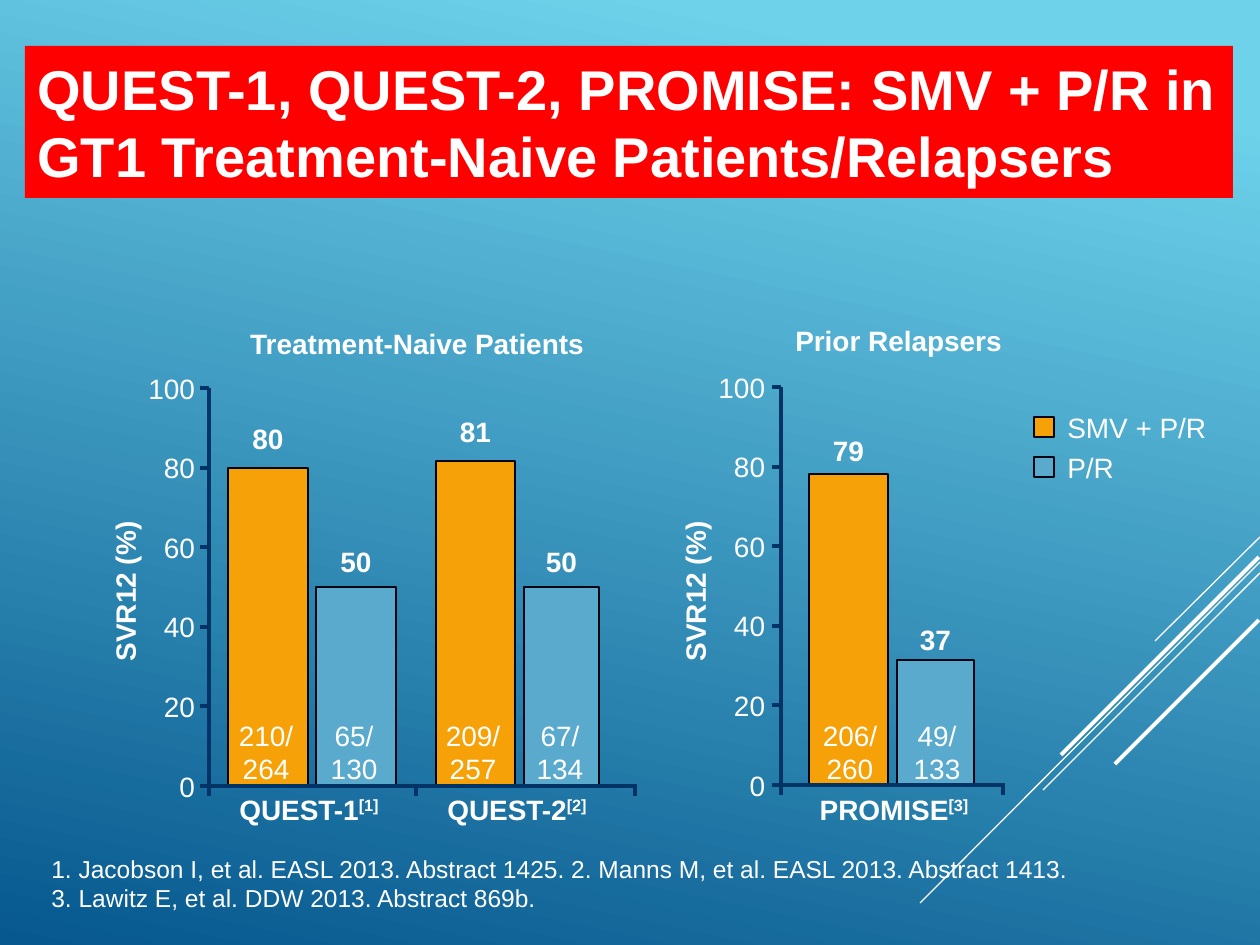
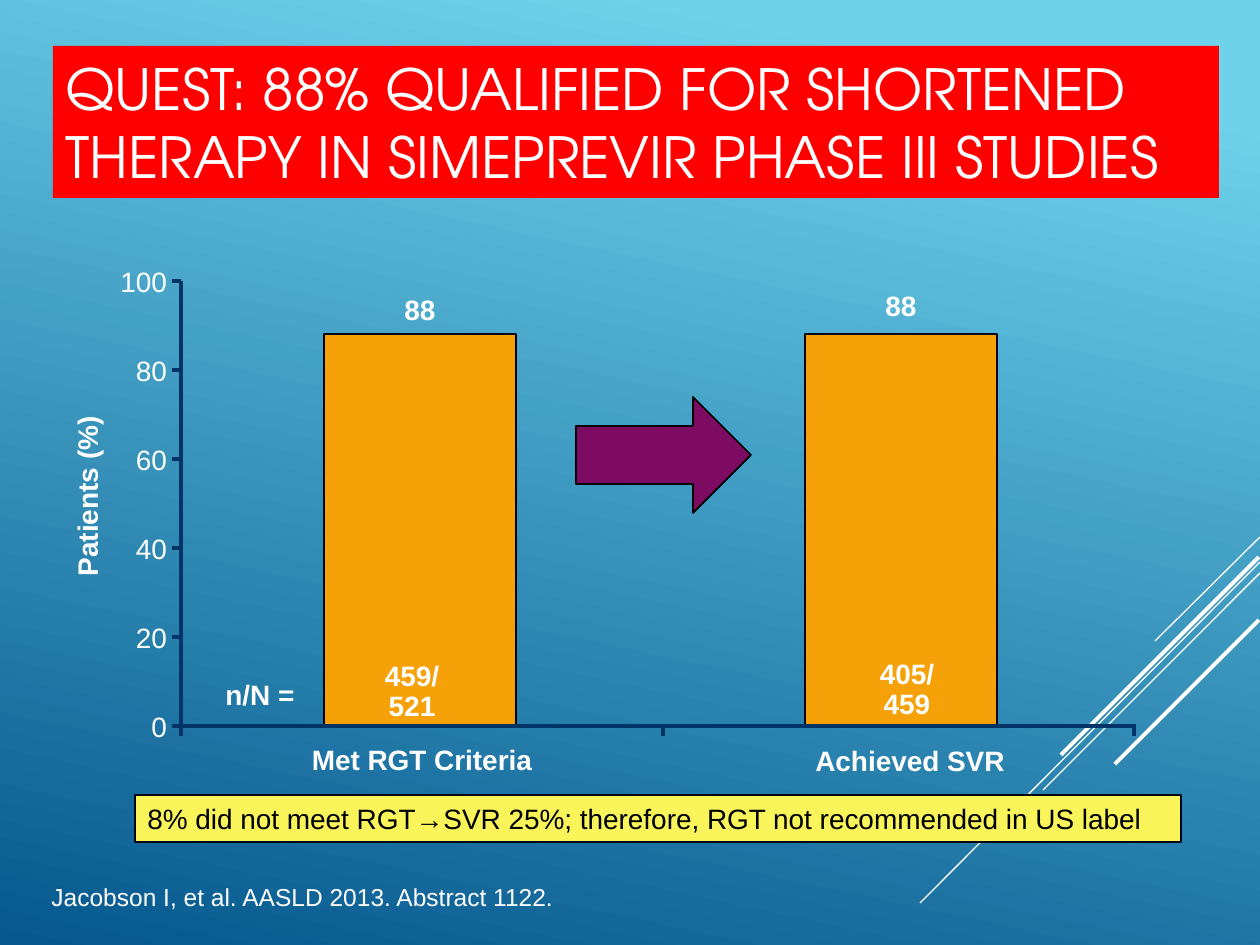
from lxml.etree import SubElement
from pptx import Presentation
from pptx.dml.color import RGBColor
from pptx.enum.shapes import MSO_CONNECTOR, MSO_SHAPE
from pptx.enum.text import MSO_ANCHOR as ANCHOR, PP_ALIGN as ALIGN
from pptx.oxml.ns import qn
from pptx.util import Pt

PX = 7257.14
WHITE = RGBColor(0xFF, 0xFF, 0xFF)
BLACK = RGBColor(0x00, 0x00, 0x00)
RED = RGBColor(0xFF, 0x00, 0x00)
ORANGE = RGBColor(0xF6, 0xA1, 0x08)
BLUE = RGBColor(0x5A, 0xAA, 0xCE)
NAVY = RGBColor(0x00, 0x33, 0x66)
PURPLE = RGBColor(0x7C, 0x0B, 0x61)
YELLOW = RGBColor(0xF8, 0xF4, 0x5A)
OUTLINE = RGBColor(0x00, 0x05, 0x14)
SKY = RGBColor(0x6E, 0xD2, 0xEB)
DEEP = RGBColor(0x06, 0x58, 0x8E)


def add_line(s, x1, y1, x2, y2, color=NAVY, width=2.25):
    c = s.shapes.add_connector(MSO_CONNECTOR.STRAIGHT, *[round(v * PX) for v in (x1, y1, x2, y2)])
    c.line.color.rgb = color
    c.line.width = Pt(width)
    SubElement(c._element.spPr, qn("a:effectLst"))


def add_box(s, x, y, w, h, text="", sup="", fill=None, line=None, line_width=0.75,
            shape=MSO_SHAPE.RECTANGLE, font="Arial", size=16, bold=False, color=WHITE,
            align=ALIGN.LEFT, anchor=ANCHOR.TOP, spacing=0.9, pad=True, rotation=0):
    frame = [round(v * PX) for v in (x, y, w, h)]
    if fill is None:
        sp = s.shapes.add_textbox(*frame)
    else:
        sp = s.shapes.add_shape(shape, *frame)
        sp.shadow.inherit = False
        sp.fill.solid()
        sp.fill.fore_color.rgb = fill
        if line is None:
            sp.line.fill.background()
        else:
            sp.line.color.rgb = line
            sp.line.width = Pt(line_width)
    sp.rotation = rotation
    if not text:
        return
    tf = sp.text_frame
    tf.word_wrap = True
    tf.vertical_anchor = anchor
    if not pad:
        tf.margin_left = tf.margin_right = tf.margin_top = tf.margin_bottom = 0
    p = tf.paragraphs[0]
    p.alignment = align
    p.line_spacing = spacing
    parts = text.split("\n")
    for i, part in enumerate(parts + [sup] if sup else parts):
        if 0 < i < len(parts):
            p.add_line_break()
        r = p.add_run()
        r.text = part
        r.font.name = font
        r.font.size = Pt(size)
        r.font.bold = bold
        r.font.color.rgb = color
        if i == len(parts):
            r._r.get_or_add_rPr().set("baseline", "30000")


prs = Presentation()
prs.slide_width = round(1260 * PX)
prs.slide_height = round(945 * PX)
s1, s2 = [prs.slides.add_slide(prs.slide_layouts[6]) for _ in range(2)]

for s in (s1, s2):
    bg = s.background.fill
    bg.gradient()
    bg.gradient_angle = 258
    for stop, color, position in zip(bg.gradient_stops, (SKY, DEEP), (0.1, 1)):
        stop.color.rgb = color
        stop.position = position
    for x1, y1, x2, y2, width in (
        (1260, 537, 1155, 641, 0.75),
        (1260, 562, 920, 903, 0.75),
        (1260, 573, 1043, 790, 0.75),
        (1259, 557, 1061, 755, 2.25),
        (1259, 620, 1115, 764, 2.25),
    ):
        add_line(s, x1, y1, x2, y2, WHITE, width)

titles = [
    (s1, 25, 1208, "QUEST-1, QUEST-2, PROMISE: SMV + P/R in GT1 Treatment-Naive Patients/Relapsers",
     "Arial", 32, True),
    (s2, 53, 1166, "QUEST: 88% QUALIFIED FOR SHORTENED THERAPY IN SIMEPREVIR PHASE III STUDIES",
     "TeX Gyre Adventor", 32.4, False),
]
for s, x, w, text, font, size, bold in titles:
    add_box(s, x, 46, w, 152, text, fill=RED, font=font, size=size, bold=bold,
            anchor=ANCHOR.MIDDLE, spacing=1)

# slide, axis x, top, base, category ticks, label right edge, axis title, its centre
panels = [
    (s1, 209, 388, 786, (209, 416, 635), 195, "SVR12 (%)", 127, 591),
    (s1, 781, 387, 785, (781, 1003), 765, "SVR12 (%)", 697, 591),
    (s2, 181, 281, 726, (181, 663, 1134), 167, "Patients (%)", 89, 496),
]
# x, top, width, colour, value, value y, counts, counts centre x, counts y
bars = [
    [(316, 587, 80, BLUE, "50", 548, "65/\n130", 354, 712),
     (228, 468, 80, ORANGE, "80", 425, "210/\n264", 266, 712),
     (436, 461, 79, ORANGE, "81", 418, "209/\n257", 473, 712),
     (524, 587, 75, BLUE, "50", 548, "67/\n134", 560, 712)],
    [(897, 660, 77, BLUE, "37", 626, "49/\n133", 937, 712),
     (809, 474, 79, ORANGE, "79", 437, "206/\n260", 850, 712)],
    [(324, 334, 192, ORANGE, "88", 296, "459/\n521", 412, 656),
     (805, 334, 192, ORANGE, "88", 292, "405/\n459", 907, 654)],
]
categories = [
    [("QUEST-1", "[1]", 309, 790), ("QUEST-2", "[2]", 517, 790)],
    [("PROMISE", "[3]", 894, 790)],
    [("Met RGT Criteria", "", 422, 740), ("Achieved SVR", "", 910, 741)],
]
for (s, x, top, base, ticks, right, name, cx, cy), panel_bars, labels in zip(panels, bars, categories):
    add_line(s, x, top, x, base)
    for i in range(6):
        y = top + (base - top) * i / 5
        add_line(s, x - 9, y, x, y)
        add_box(s, right - 60, y - 13, 60, 30, str(100 - 20 * i), align=ALIGN.RIGHT, pad=False)
    add_box(s, cx - 199, cy - 21, 398, 43, name, bold=True, align=ALIGN.CENTER, rotation=270)
    for bx, by, w, color, value, value_y, counts, counts_x, counts_y in panel_bars:
        add_box(s, bx, by, w, base - by, fill=color, line=OUTLINE)
        add_box(s, bx + w / 2 - 20, value_y, 40, 30, value, bold=True, align=ALIGN.CENTER, pad=False)
        add_box(s, counts_x - 41, counts_y, 82, 81, counts, bold=s is s2, align=ALIGN.CENTER,
                spacing=0.9 if s is s2 else 1)
    add_line(s, x - 3, base, ticks[-1] + 2, base)
    for tick in ticks:
        add_line(s, tick, base, tick, base + 10)
    for text, sup, label_x, label_y in labels:
        add_box(s, label_x - 130, label_y, 260, 43, text, sup, bold=True, align=ALIGN.CENTER)

for x, y, w, text in ((212, 324, 418, "Treatment-Naive Patients "), (782, 321, 233, "Prior Relapsers")):
    add_box(s1, x, y, w, 43, text, bold=True, align=ALIGN.CENTER)
for y, color, text in ((417, ORANGE, "SMV + P/R"), (457, BLUE, "P/R")):
    add_box(s1, 1034, y, 20, 20, fill=color, line=OUTLINE)
    add_box(s1, 1055, y - 9, 175, 43, text)
add_box(s1, 39, 856, 1174, 54,
        "1. Jacobson I, et al. EASL 2013. Abstract 1425. 2. Manns M, et al. EASL 2013. Abstract 1413.\n"
        "3. Lawitz E, et al. DDW 2013. Abstract 869b.",
        size=14, anchor=ANCHOR.MIDDLE, spacing=1)

add_box(s2, 576, 397, 175, 116, fill=PURPLE, line=BLACK, line_width=1, shape=MSO_SHAPE.RIGHT_ARROW)
add_box(s2, 213, 675, 105, 43, "n/N =", bold=True)
add_box(s2, 135, 795, 1046, 47,
        "8% did not meet RGT→SVR 25%; therefore, RGT not recommended in US label",
        fill=YELLOW, line=OUTLINE, color=BLACK, spacing=1)
add_box(s2, 39, 879, 1218, 39, "Jacobson I, et al. AASLD 2013. Abstract 1122.",
        size=14, anchor=ANCHOR.BOTTOM)

prs.save("out.pptx")
